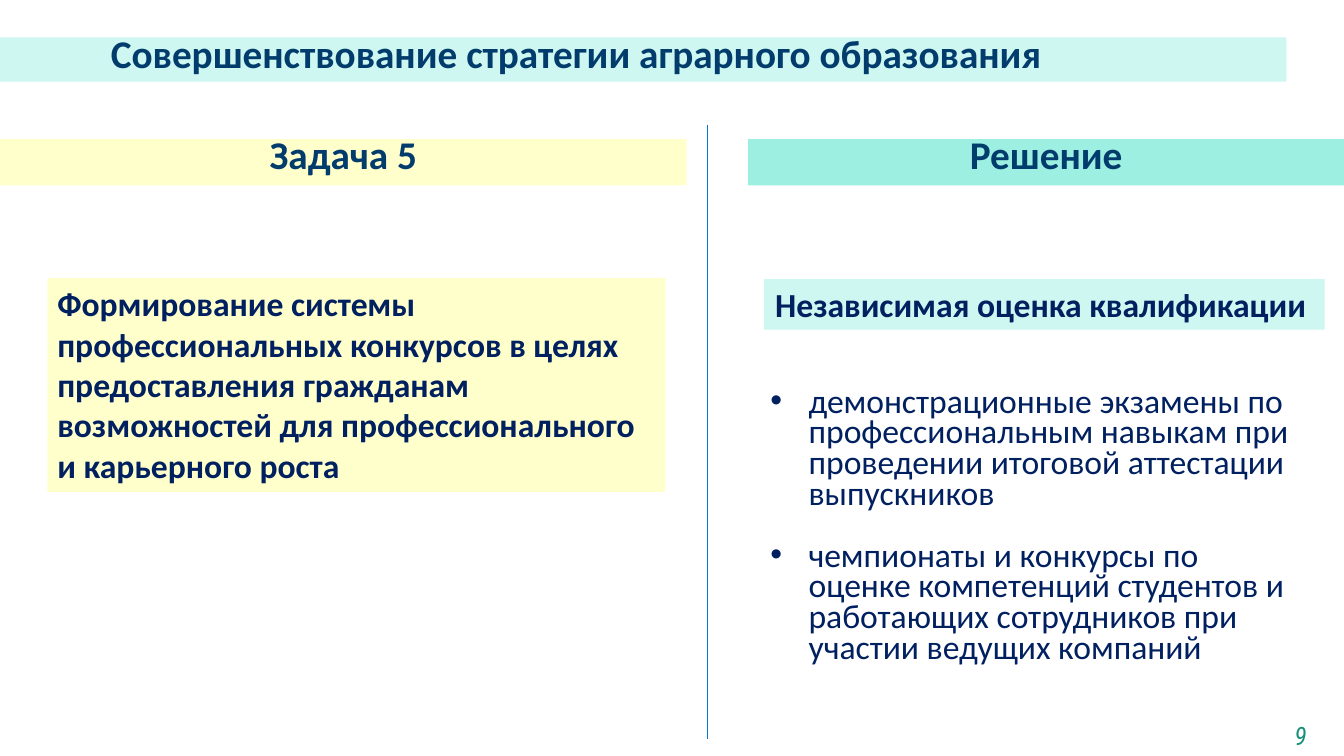
from dataclasses import dataclass

from lxml.etree import SubElement
from pptx import Presentation
from pptx.dml.color import RGBColor
from pptx.enum.shapes import MSO_CONNECTOR, MSO_SHAPE
from pptx.enum.text import MSO_ANCHOR, MSO_AUTO_SIZE, PP_ALIGN
from pptx.oxml.ns import qn
from pptx.util import Inches, Pt


@dataclass(frozen=True)
class Theme:
    font: str = "Calibri"
    number_font: str = "Roboto Condensed"
    heading: RGBColor = RGBColor(0x02, 0x3C, 0x6D)
    body: RGBColor = RGBColor(0x00, 0x20, 0x60)
    number: RGBColor = RGBColor(0x17, 0x8F, 0x7B)
    divider: RGBColor = RGBColor(0x04, 0x79, 0xDA)
    yellow: RGBColor = RGBColor(0xFF, 0xFF, 0xCC)
    mint: RGBColor = RGBColor(0xCD, 0xF7, 0xF0)
    turquoise: RGBColor = RGBColor(0x9C, 0xEF, 0xE1)
    heading_size: Pt = Pt(28)
    body_size: Pt = Pt(24)
    number_size: Pt = Pt(18)


theme = Theme()
HEADING = {"name": theme.font, "size": theme.heading_size, "color": theme.heading, "bold": True}
STATEMENT = {"name": theme.font, "size": theme.body_size, "color": theme.body, "bold": True}
LIST_ITEM = STATEMENT | {"bold": False}
PAGE_NUMBER = {"name": theme.number_font, "size": theme.number_size, "color": theme.number,
               "italic": True}


def place(shape, left, top, width, height):
    box = {"left": left, "top": top, "width": width, "height": height}
    for name, value in box.items():
        setattr(shape, name, Inches(value))


def write(shape, lines, font_format, alignment=PP_ALIGN.LEFT, line_spacing=None, gap=Pt(0)):
    """Fill a shape with one paragraph per line, with a gap between paragraphs."""
    frame = shape.text_frame
    frame.text = "\n".join(lines)
    frame_format = {"word_wrap": True, "auto_size": MSO_AUTO_SIZE.NONE,
                    "vertical_anchor": MSO_ANCHOR.TOP}
    for name, value in frame_format.items():
        setattr(frame, name, value)
    for index, paragraph in enumerate(frame.paragraphs):
        paragraph_format = {"alignment": alignment, "line_spacing": line_spacing,
                            "space_before": gap if index else Pt(0)}
        for name, value in paragraph_format.items():
            setattr(paragraph, name, value)
        font = paragraph.runs[0].font
        for name, value in font_format.items():
            if name == "color":
                font.color.rgb = value
            else:
                setattr(font, name, value)


presentation = Presentation()
presentation.slide_width = Inches(13.33)
presentation.slide_height = Inches(7.5)
slide = presentation.slides.add_slide(presentation.slide_layouts[1])

# Title band
title = slide.shapes.title
place(title, 0, 0.37, 12.76, 0.44)
title.fill.solid()
title.fill.fore_color.rgb = theme.mint
write(title, ["Совершенствование стратегии аграрного образования"], HEADING, line_spacing=Pt(24))
title.text_frame.margin_left = Inches(1.1)

# Divider between the task and the solution
divider = slide.shapes.add_connector(
    MSO_CONNECTOR.STRAIGHT, Inches(7.02), Inches(1.24), Inches(7.02), Inches(7.33))
divider.line.color.rgb = theme.divider
divider.line.width = Pt(0.5)
SubElement(divider._element.spPr, qn("a:effectLst"))

# Column headings and the statements below them
bands = [
    ("Задача 5", (0, 1.38, 6.81, 0.46), theme.yellow, HEADING, PP_ALIGN.CENTER, Pt(24)),
    ("Решение", (7.42, 1.38, 5.91, 0.46), theme.turquoise, HEADING, PP_ALIGN.CENTER, Pt(24)),
    ("Формирование системы профессиональных конкурсов в целях предоставления гражданам "
     "возможностей для профессионального и карьерного роста",
     (0.47, 2.76, 6.13, 2.12), theme.yellow, STATEMENT, PP_ALIGN.LEFT, None),
    ("Независимая оценка квалификации ",
     (7.58, 2.77, 5.56, 0.5), theme.mint, STATEMENT, PP_ALIGN.CENTER, None),
]
for text, box, color, font_format, alignment, line_spacing in bands:
    band = slide.shapes.add_shape(MSO_SHAPE.RECTANGLE, *map(Inches, box))
    band.shadow.inherit = False
    band.fill.solid()
    band.fill.fore_color.rgb = color
    band.line.fill.background()
    write(band, [text], font_format, alignment, line_spacing)

# Solution list
solutions = slide.placeholders[1]
place(solutions, 7.54, 3.81, 5.45, 2.88)
write(solutions, [
    "демонстрационные экзамены по профессиональным навыкам при проведении итоговой аттестации "
    "выпускников",
    "чемпионаты и конкурсы по оценке компетенций студентов и работающих сотрудников при участии "
    "ведущих компаний",
], LIST_ITEM, line_spacing=Pt(22), gap=Pt(22))
for paragraph in solutions.text_frame.paragraphs:
    properties = paragraph._p.get_or_add_pPr()
    properties.set("marL", str(Inches(0.38)))
    properties.set("indent", str(-Inches(0.38)))

# Page number
page_number = slide.shapes.add_textbox(Inches(12.47), Inches(7.1), Inches(0.86), Inches(0.4))
write(page_number, ["9"], PAGE_NUMBER, PP_ALIGN.CENTER)

presentation.save("out.pptx")
